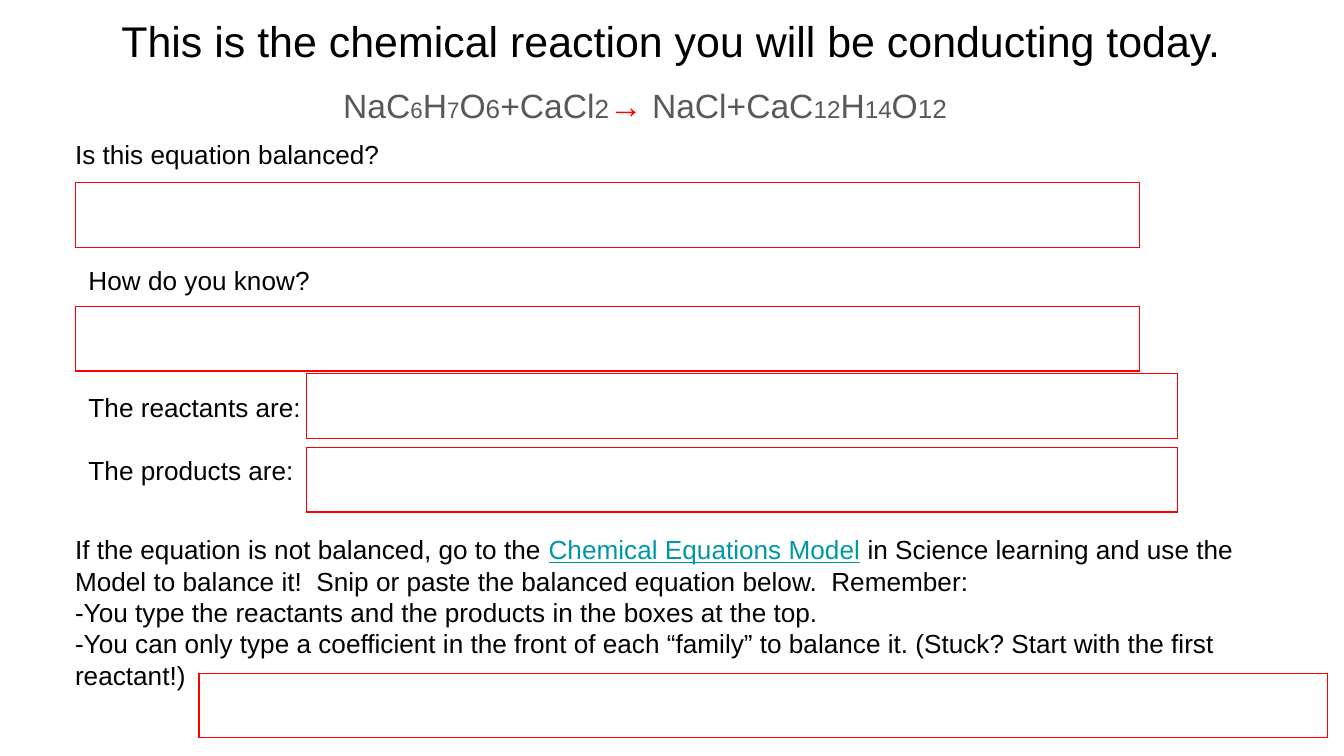
from lxml.etree import SubElement
from pptx import Presentation
from pptx.dml.color import RGBColor
from pptx.enum.text import PP_ALIGN
from pptx.oxml.ns import qn
from pptx.util import Inches, Pt

BLACK, GRAY, RED, TEAL = "000000", "595959", "FF0000", "0097A7"


def rgb(value):
    return RGBColor.from_string(value)


def add_run(p, text, size=14, color=BLACK, underline=None):
    r = p.add_run()
    r.text = text
    r.font.name = "Arial"
    r.font.size = Pt(size)
    r.font.color.rgb = rgb(color)
    r.font.underline = underline


class Worksheet:
    inset = Inches(0.1)
    cell_inset = Inches(0.09)
    border_color = RED
    border_width = Pt(0.75)

    def __init__(self, slide):
        self.s = slide

    def text(self, left, top, width, height, paragraphs, align=PP_ALIGN.LEFT,
             line_spacing=None, space_after=0):
        """Add a text box; each paragraph is a list of (text, format) runs."""
        sp = self.s.shapes.add_textbox(Inches(left), Inches(top), Inches(width), Inches(height))
        tf = sp.text_frame
        tf.word_wrap = True
        tf.margin_left = tf.margin_right = tf.margin_top = tf.margin_bottom = self.inset
        for i, runs in enumerate(paragraphs):
            p = tf.add_paragraph() if i else tf.paragraphs[0]
            p.alignment = align
            p.space_after = Pt(space_after)
            if line_spacing:
                p.line_spacing = line_spacing
            for text, style in runs:
                add_run(p, text, **style)

    def answer_box(self, left, top, width, height):
        """Add a one-cell table for the student's answer."""
        frame = self.s.shapes.add_table(1, 1, Inches(left), Inches(top), Inches(width), Inches(height))
        cell = frame.table.cell(0, 0)
        cell.margin_left = cell.margin_right = self.inset
        cell.margin_top = cell.margin_bottom = self.cell_inset
        tc_pr = cell._tc.get_or_add_tcPr()
        for side in ("a:lnL", "a:lnR", "a:lnT", "a:lnB"):
            ln = SubElement(tc_pr, qn(side), w=str(self.border_width))
            fill = SubElement(ln, qn("a:solidFill"))
            SubElement(fill, qn("a:srgbClr"), val=self.border_color)
        cell.fill.background()


def main():
    prs = Presentation()
    prs.slide_width = Inches(10)
    prs.slide_height = prs.slide_width * 9 // 16
    sheet = Worksheet(prs.slides.add_slide(prs.slide_layouts[6]))

    sheet.text(0.34, 0.01, 9.32, 0.63,
               [[("This is the chemical reaction you will be conducting today.", {"size": 23})]],
               align=PP_ALIGN.CENTER)

    equation = [("NaC", 18), ("6", 12), ("H", 18), ("7", 12), ("O", 18), ("6", 14),
                ("+CaCl", 18), ("2", 14), ("→", 18), (" NaCl+CaC", 18), ("12", 13),
                ("H", 18), ("14", 13), ("O", 18), ("12", 14)]
    sheet.text(0.14, 0.49, 9.32, 0.63,
               [[(text, {"size": size, "color": RED if text == "→" else GRAY})
                 for text, size in equation]],
               align=PP_ALIGN.CENTER, line_spacing=1.15, space_after=16)

    sheet.text(0.46, 0.93, 5.92, 0.49, [[("Is this equation balanced?", {})]])
    sheet.text(0.56, 1.87, 8.88, 0.68, [[("How do you know?", {})]])
    sheet.answer_box(0.56, 2.28, 7.92, 0.42)
    sheet.text(0.46, 3.87, 8.88, 0.49, [
        [("If the equation is not balanced, go to the ", {}),
         ("Chemical Equations Model", {"color": TEAL, "underline": True}),
         (" in Science learning and use the Model to balance it!  Snip or paste "
          "the balanced equation below.  Remember:", {})],
        [("-You type the reactants and the products in the boxes at the top.", {})],
        [("-You can only type a coefficient in the front of each “family” to balance it. "
          "(Stuck? Start with the first reactant!)", {})],
    ])
    sheet.answer_box(1.48, 5.01, 8.4, 0.46)
    sheet.answer_box(0.56, 1.36, 7.92, 0.42)
    sheet.text(0.56, 2.81, 8.88, 0.68,
               [[("The reactants are:", {})], [("The products are:", {})]], space_after=17)
    for top in (2.78, 3.33):
        sheet.answer_box(2.28, top, 6.48, 0.46)

    prs.save("out.pptx")


if __name__ == "__main__":
    main()
